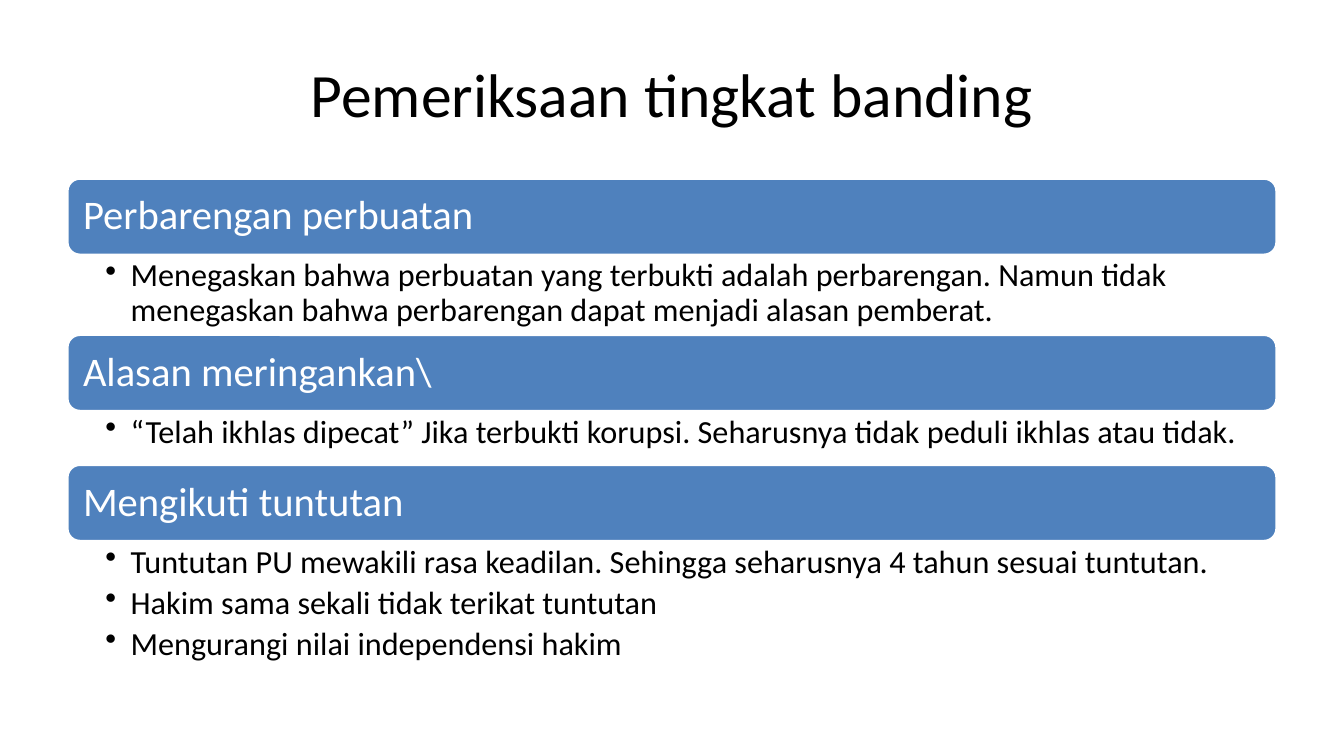
from lxml import etree
from pptx import Presentation
from pptx import util as u
from pptx.dml.color import RGBColor
from pptx.enum import shapes, text
from pptx.oxml.ns import qn

TITLE = "Pemeriksaan tingkat banding"
# heading, points, height of the points in inches
SECTIONS = [
    ("Perbarengan perbuatan",
     ["Menegaskan bahwa perbuatan yang terbukti adalah perbarengan. Namun tidak "
      "menegaskan bahwa perbarengan dapat menjadi alasan pemberat."], 0.79),
    ("Alasan meringankan\\",
     ["“Telah ikhlas dipecat” Jika terbukti korupsi. Seharusnya tidak peduli "
      "ikhlas atau tidak."], 0.53),
    ("Mengikuti tuntutan",
     ["Tuntutan PU mewakili rasa keadilan. Sehingga seharusnya 4 tahun sesuai tuntutan.",
      "Hakim sama sekali tidak terikat tuntutan",
      "Mengurangi nilai independensi hakim"], 1.31),
]
COLORS = {"bar": "4F81BD", "white": "FFFFFF", "black": "000000"}
FONT = "Calibri"
SLIDE_W, SLIDE_H = 13.33, 7.5
MARGIN = SLIDE_W * 0.05
CONTENT_W = SLIDE_W * 0.9
TITLE_TOP, TITLE_H = SLIDE_H * 0.04, SLIDE_H / 6
FIRST_TOP, BAR_H = 1.77, 0.76
INDENT = 0.25


def color(name):
    return RGBColor.from_string(COLORS[name])


def set_frame(frame, anchor, insets):
    """Insets are left, top, right, bottom in inches."""
    frame.word_wrap = True
    frame.vertical_anchor = anchor
    (frame.margin_left, frame.margin_top,
     frame.margin_right, frame.margin_bottom) = map(u.Inches, insets)


def write(paragraph, words, size, ink, align=text.PP_ALIGN.LEFT):
    paragraph.alignment = align
    run = paragraph.add_run()
    run.text = words
    run.font.name = FONT
    run.font.size = u.Pt(size)
    run.font.color.rgb = color(ink)


def add_bullet(paragraph):
    props = paragraph._p.get_or_add_pPr()
    props.set("marL", str(u.Inches(INDENT)))
    props.set("indent", str(-u.Inches(INDENT)))
    etree.SubElement(props, qn("a:buChar")).set("char", "•")


def place(top, height):
    return [u.Inches(n) for n in (MARGIN, top, CONTENT_W, height)]


def add_section(slide, top, heading, points, points_h):
    bar = slide.shapes.add_shape(shapes.MSO_SHAPE.ROUNDED_RECTANGLE, *place(top, BAR_H))
    bar.shadow.inherit = False
    bar.fill.solid()
    bar.fill.fore_color.rgb = color("bar")
    bar.line.color.rgb = color("white")
    bar.line.width = u.Pt(2)
    set_frame(bar.text_frame, text.MSO_ANCHOR.MIDDLE, [0.12] * 4)
    heading_line = bar.text_frame.paragraphs[0]
    heading_line.line_spacing = 0.9
    write(heading_line, heading, 29, "white")

    body = slide.shapes.add_textbox(*place(top + BAR_H, points_h)).text_frame
    set_frame(body, text.MSO_ANCHOR.TOP, (0.38, 0.04, 0.23, 0.04))
    for i, point in enumerate(points):
        item = body.add_paragraph() if i else body.paragraphs[0]
        add_bullet(item)
        item.level = 1
        item.line_spacing = 0.9
        item.space_after = u.Pt(4.6)
        write(item, point, 23, "black")


def main():
    deck = Presentation()
    deck.slide_width, deck.slide_height = u.Inches(SLIDE_W), u.Inches(SLIDE_H)
    slide = deck.slides.add_slide(deck.slide_layouts[6])

    title = slide.shapes.add_textbox(*place(TITLE_TOP, TITLE_H)).text_frame
    set_frame(title, text.MSO_ANCHOR.MIDDLE, (0.1, 0.05, 0.1, 0.05))
    write(title.paragraphs[0], TITLE, 44, "black", text.PP_ALIGN.CENTER)

    top = FIRST_TOP
    for heading, points, points_h in SECTIONS:
        add_section(slide, top, heading, points, points_h)
        top += BAR_H + points_h
    deck.save("out.pptx")


if __name__ == "__main__":
    main()
